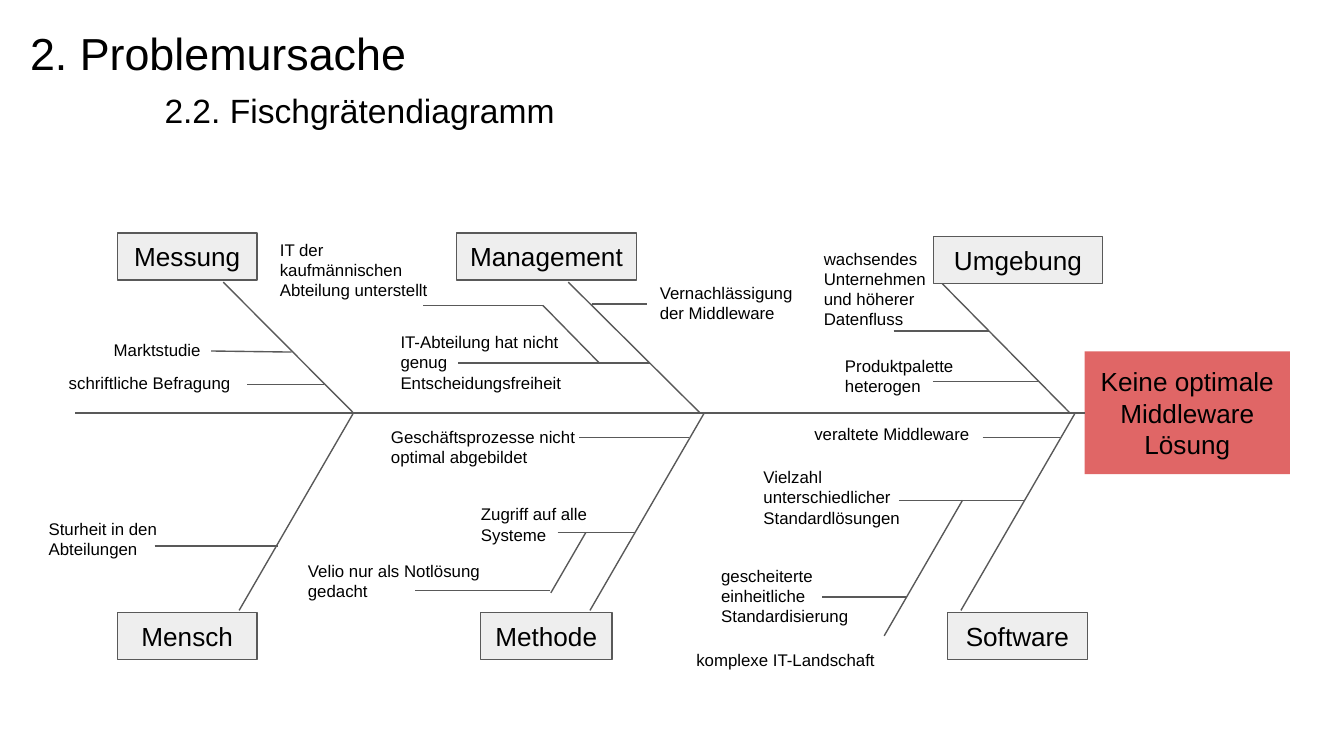
"""Build the fishbone diagram slide on the causes of the missing middleware solution."""
from lxml import etree
from pptx import Presentation
from pptx import util as u
from pptx.dml.color import RGBColor
from pptx.enum import shapes, text
from pptx.oxml.ns import qn

COLORS = {"text": "000000", "line": "595959", "category": "EEEEEE", "problem": "E06666"}


def write(shape, lines, sizes, align, anchor):
    frame = shape.text_frame
    frame.word_wrap = True
    frame.vertical_anchor = anchor
    frame.margin_left = frame.margin_right = u.Cm(0.25)
    frame.margin_top = frame.margin_bottom = u.Cm(0.25)
    frame.text = "\n".join(lines)
    for paragraph, size in zip(frame.paragraphs, sizes):
        paragraph.alignment = align
        paragraph.font.name = "Arial"
        paragraph.font.size = u.Pt(size)
        paragraph.font.color.rgb = RGBColor.from_string(COLORS["text"])


def draw_line(x1, y1, x2, y2):
    line = slide.shapes.add_connector(
        shapes.MSO_CONNECTOR.STRAIGHT, u.Cm(x1), u.Cm(y1), u.Cm(x2), u.Cm(y2))
    line.line.color.rgb = RGBColor.from_string(COLORS["line"])
    line.line.width = u.Pt(0.75)
    etree.SubElement(line._element.spPr, qn("a:effectLst"))
    return line


prs = Presentation()
prs.slide_width, prs.slide_height = u.Cm(25.4), u.Cm(14.28)
slide = prs.slides.add_slide(prs.slide_layouts[6])

heading = slide.shapes.add_textbox(u.Cm(0.32), u.Cm(0.23), u.Cm(23.67), u.Cm(1.45))
write(heading, ["2. Problemursache", "2.2. Fischgrätendiagramm"], [24, 18],
      text.PP_ALIGN.LEFT, text.MSO_ANCHOR.TOP)
subheading = heading.text_frame.paragraphs[1]
subheading.space_before = u.Pt(6)
subheading._p.get_or_add_pPr().set("marL", str(u.Cm(2.54)))

boxes = [
    ("Messung", 2.22, 4.4, 2.64, 0.89),
    ("Management", 8.63, 4.4, 3.4, 0.89),
    ("Umgebung", 17.64, 4.47, 3.2, 0.89),
    ("Mensch", 2.22, 11.57, 2.64, 0.89),
    ("Methode", 9.08, 11.57, 2.49, 0.89),
    ("Software", 17.91, 11.57, 2.64, 0.89),
    ("Keine optimale Middleware Lösung", 20.5, 6.64, 3.88, 2.32),
]
for label, left, top, width, height in boxes:
    box = slide.shapes.add_shape(
        shapes.MSO_SHAPE.RECTANGLE, u.Cm(left), u.Cm(top), u.Cm(width), u.Cm(height))
    box.shadow.inherit = False
    box.fill.solid()
    if label.startswith("Keine"):
        problem = box
        box.fill.fore_color.rgb = RGBColor.from_string(COLORS["problem"])
        box.line.fill.background()
    else:
        box.fill.fore_color.rgb = RGBColor.from_string(COLORS["category"])
        box.line.color.rgb = RGBColor.from_string(COLORS["line"])
        box.line.width = u.Pt(0.75)
    write(box, [label], [14], text.PP_ALIGN.CENTER, text.MSO_ANCHOR.MIDDLE)

spine_y = 7.8
spine = draw_line(20.5, spine_y, 1.42, spine_y)
spine.begin_connect(problem, 1)

bones = [
    (4.22, 5.33, 6.68), (10.74, 5.33, 13.23), (17.81, 5.36, 20.22),
    (4.52, 11.53, 6.68), (11.15, 11.53, 13.31), (18.16, 11.53, 20.32),
]
for outer_x, outer_y, spine_x in bones:
    draw_line(outer_x, outer_y, spine_x, spine_y)

side_bones = [(10.26, 5.77, 11.33, 6.86), (11.07, 10.06, 10.41, 11.2), (18.19, 9.45, 16.71, 12.01)]
for side_bone in side_bones:
    draw_line(*side_bone)

causes = [
    ("Marktstudie", 1.9, 6.23, 2.46, 0.89, (3.99, 6.63, 5.51, 6.65)),
    ("schriftliche Befragung", 1.05, 6.84, 4.67, 0.89, (4.67, 7.26, 6.12, 7.26)),
    ("IT der kaufmännischen Abteilung unterstellt", 5.04, 4.27, 3.4, 1.78,
     (8, 5.77, 10.26, 5.77)),
    ("IT-Abteilung hat nicht genug Entscheidungsfreiheit", 7.32, 6.02, 3.61, 1.5,
     (8.66, 6.86, 12.29, 6.86)),
    ("Vernachlässigung der Middleware", 12.22, 5.09, 3.1, 1.3, (11.18, 5.74, 12.22, 5.74)),
    ("wachsendes Unternehmen und höherer Datenfluss", 15.32, 4.44, 2.64, 1.88,
     (16.89, 6.25, 18.69, 6.25)),
    ("Produktpalette heterogen", 15.72, 6.47, 2.79, 1.12, (17.63, 7.21, 19.63, 7.21)),
    ("Sturheit in den Abteilungen", 0.67, 9.55, 3.4, 1.5, (2.92, 10.31, 5.26, 10.31)),
    ("Geschäftsprozesse nicht optimal abgebildet", 7.14, 7.81, 4.11, 1.6,
     (10.95, 8.26, 13.03, 8.26)),
    ("Zugriff auf alle Systeme", 8.84, 9.27, 3.2, 0.89, (10.54, 10.06, 12.01, 10.06)),
    ("Velio nur als Notlösung gedacht", 5.57, 10.34, 4.11, 1.3, (7.85, 11.15, 10.39, 11.15)),
    ("veraltete Middleware", 15.14, 7.81, 4.67, 0.89, (18.57, 8.26, 20.04, 8.26)),
    ("Vielzahl unterschiedlicher Standardlösungen", 14.18, 8.57, 3.4, 1.78,
     (16.99, 9.45, 19.35, 9.45)),
    ("gescheiterte einheitliche Standardisierung", 13.38, 10.43, 3.4, 1.5,
     (15.54, 11.28, 17.15, 11.28)),
    ("komplexe IT-Landschaft", 12.91, 12.08, 4.32, 0.89, None),
]
for cause, left, top, width, height, branch in causes:
    note = slide.shapes.add_textbox(u.Cm(left), u.Cm(top), u.Cm(width), u.Cm(height))
    write(note, [cause], [9], text.PP_ALIGN.LEFT, text.MSO_ANCHOR.TOP)
    if branch:
        draw_line(*branch)

prs.save("out.pptx")
